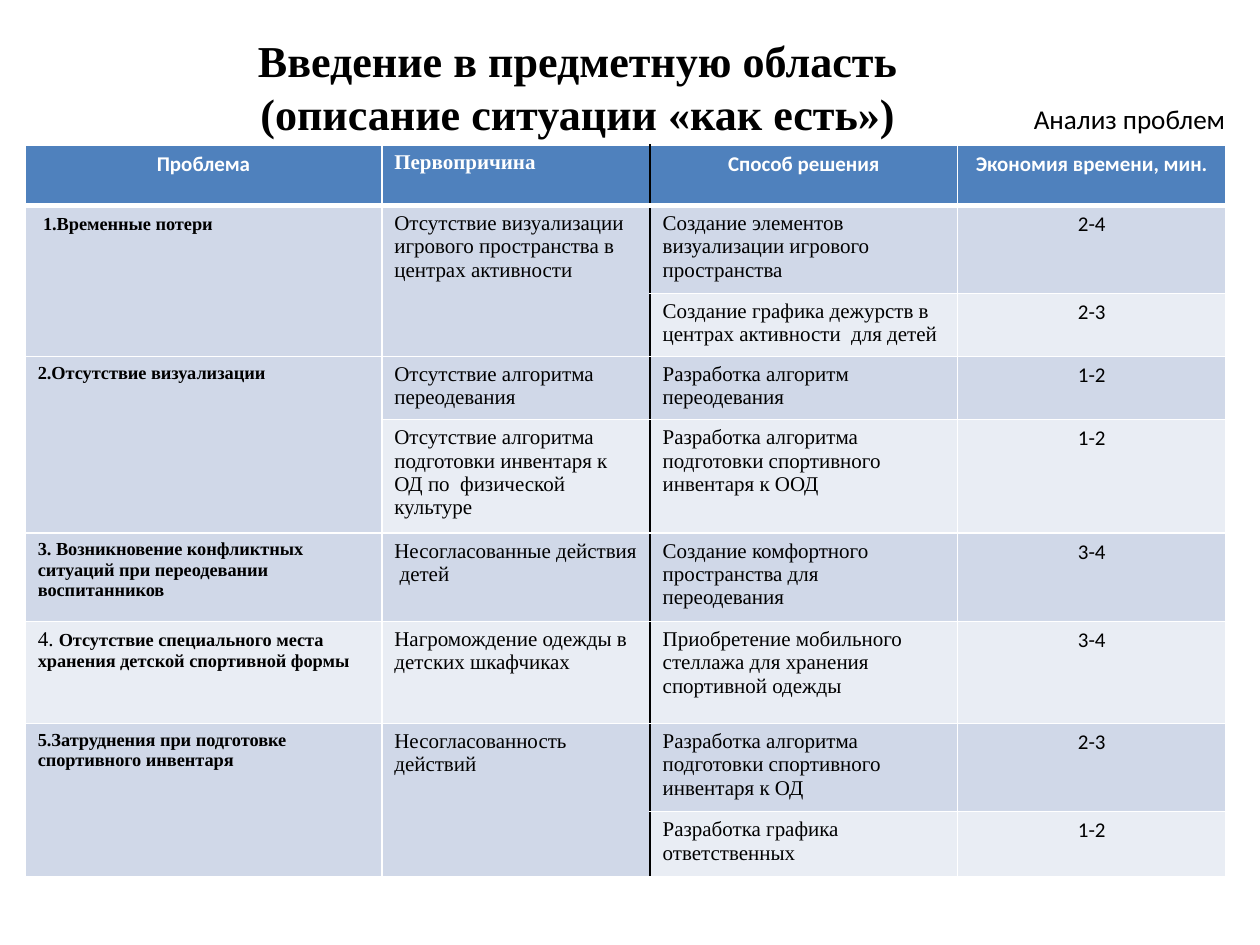
from dataclasses import dataclass

from lxml import etree
from pptx import Presentation
from pptx.dml.color import RGBColor
from pptx.enum.text import MSO_ANCHOR, PP_ALIGN
from pptx.oxml.ns import qn
from pptx.util import Inches, Pt

LEFT, CENTER, RIGHT = PP_ALIGN.LEFT, PP_ALIGN.CENTER, PP_ALIGN.RIGHT
TOP, MIDDLE = MSO_ANCHOR.TOP, MSO_ANCHOR.MIDDLE

# The slide is a grid of 100 columns and 75 rows.
GRID_UNIT = Inches(0.1)
GRID_COLUMNS, GRID_ROWS = 100, 75


@dataclass(frozen=True)
class Theme:
    black: str = "000000"
    white: str = "FFFFFF"
    header: str = "4F81BD"
    bands: tuple = ("D0D8E8", "E9EDF4")
    serif: str = "Times New Roman"
    sans: str = "Calibri"
    title_size: float = 25.2
    subtitle_size: float = 15.5
    table_size: float = 12
    problem_size: float = 10.5


THEME = Theme()

COLUMN_WIDTHS = [28.3, 21.3, 24.4, 21.3]
ROW_HEIGHTS = [4.8, 6.7, 4.8, 4.8, 8.6, 6.7, 8.1, 6.7, 5.2]
HEADERS = ["Проблема", "Первопричина", "Способ решения", "Экономия времени, мин."]

# Each row: (number prefix, problem), cause, solution, minutes saved.
# None continues the cell above.
ROWS = [
    [(" ", "1.Временные потери"),
     "Отсутствие визуализации  игрового пространства в центрах активности",
     "Создание элементов визуализации игрового пространства", "2-4"],
    [None, None, "Создание графика дежурств в центрах активности  для детей", "2-3"],
    [("", "2.Отсутствие визуализации"), "Отсутствие алгоритма переодевания",
     "Разработка алгоритм переодевания", "1-2"],
    [None, "Отсутствие алгоритма подготовки инвентаря к ОД по  физической культуре",
     "Разработка алгоритма подготовки спортивного инвентаря к ООД", "1-2"],
    [("", "3. Возникновение конфликтных ситуаций при переодевании воспитанников"),
     "Несогласованные действия  детей",
     "Создание комфортного пространства для переодевания", "3-4"],
    [("4. ", "Отсутствие специального места хранения детской спортивной формы"),
     "Нагромождение одежды в детских шкафчиках",
     "Приобретение мобильного стеллажа для хранения спортивной одежды", "3-4"],
    [("", "5.Затруднения при подготовке спортивного инвентаря"),
     "Несогласованность действий",
     "Разработка алгоритма подготовки спортивного инвентаря к ОД", "2-3"],
    [None, None, "Разработка графика ответственных", "1-2"],
]


def grid(*lengths):
    return [round(length * GRID_UNIT) for length in lengths]


def write(paragraph, text, *, size=THEME.table_size, font=THEME.serif,
          color=THEME.black, bold=False, align=LEFT):
    paragraph.alignment = align
    for index, line in enumerate(text.split("\n")):
        if index:
            paragraph.add_line_break()
        run = paragraph.add_run()
        run.text = line
        run.font.size = Pt(size)
        run.font.name = font
        run.font.bold = bold
        run.font.color.rgb = RGBColor.from_string(color)


def add_text(slide, place, text, anchor=TOP, **text_format):
    frame = slide.shapes.add_textbox(*grid(*place)).text_frame
    frame.word_wrap = True
    frame.vertical_anchor = anchor
    write(frame.paragraphs[0], text, **text_format)


def set_borders(cell, row, column):
    """White rules, thick under the header, black between causes and solutions."""
    edges = {
        "a:lnL": (THEME.black if column == 2 else THEME.white, 1),
        "a:lnR": (THEME.black if column == 1 else THEME.white, 1),
        "a:lnT": (THEME.white, 3 if row == 1 else 1),
        "a:lnB": (THEME.white, 3 if row == 0 else 1),
    }
    properties = cell._tc.get_or_add_tcPr()
    for tag, (color, width) in edges.items():
        line = etree.SubElement(properties, qn(tag), w=str(Pt(width)))
        fill = etree.SubElement(line, qn("a:solidFill"))
        etree.SubElement(fill, qn("a:srgbClr"), val=color)


def style_cell(cell, row, column):
    set_borders(cell, row, column)
    color = THEME.bands[(row - 1) % 2] if row else THEME.header
    cell.fill.solid()
    cell.fill.fore_color.rgb = RGBColor.from_string(color)


def write_header(table):
    for column, text in enumerate(HEADERS):
        is_cause = column == 1
        write(table.cell(0, column).text_frame.paragraphs[0], text,
              font=THEME.serif if is_cause else THEME.sans,
              color=THEME.white, bold=True, align=LEFT if is_cause else CENTER)


def write_body_cell(table, row, column, content):
    if content is None:
        table.cell(row - 1, column).merge(table.cell(row, column))
        return
    paragraph = table.cell(row, column).text_frame.paragraphs[0]
    if column == 0:
        prefix, problem = content
        if prefix:
            write(paragraph, prefix)
        write(paragraph, problem, size=THEME.problem_size, bold=True)
    elif column == 3:
        write(paragraph, content, font=THEME.sans, align=CENTER)
    else:
        write(paragraph, content)


def add_problem_table(slide, left, top):
    place = grid(left, top, sum(COLUMN_WIDTHS), sum(ROW_HEIGHTS))
    table = slide.shapes.add_table(len(ROW_HEIGHTS), len(COLUMN_WIDTHS), *place).table
    for column, width in zip(table.columns, grid(*COLUMN_WIDTHS)):
        column.width = width
    for row, height in zip(table.rows, grid(*ROW_HEIGHTS)):
        row.height = height
    for row in range(len(ROW_HEIGHTS)):
        for column in range(len(COLUMN_WIDTHS)):
            style_cell(table.cell(row, column), row, column)
    write_header(table)
    for row, contents in enumerate(ROWS, start=1):
        for column, content in enumerate(contents):
            write_body_cell(table, row, column, content)


def main():
    presentation = Presentation()
    presentation.slide_width, presentation.slide_height = grid(GRID_COLUMNS, GRID_ROWS)
    slide = presentation.slides.add_slide(presentation.slide_layouts[6])
    add_text(slide, (5, 3, 81.7, 7.7),
             "Введение в предметную область\n(описание ситуации «как есть»)",
             anchor=MIDDLE, size=THEME.title_size, bold=True, align=CENTER)
    add_text(slide, (34.3, 7.6, 63.9, 3.1), "Анализ проблем",
             size=THEME.subtitle_size, font=THEME.sans, align=RIGHT)
    add_problem_table(slide, 2, 11.5)
    presentation.save("out.pptx")


if __name__ == "__main__":
    main()
